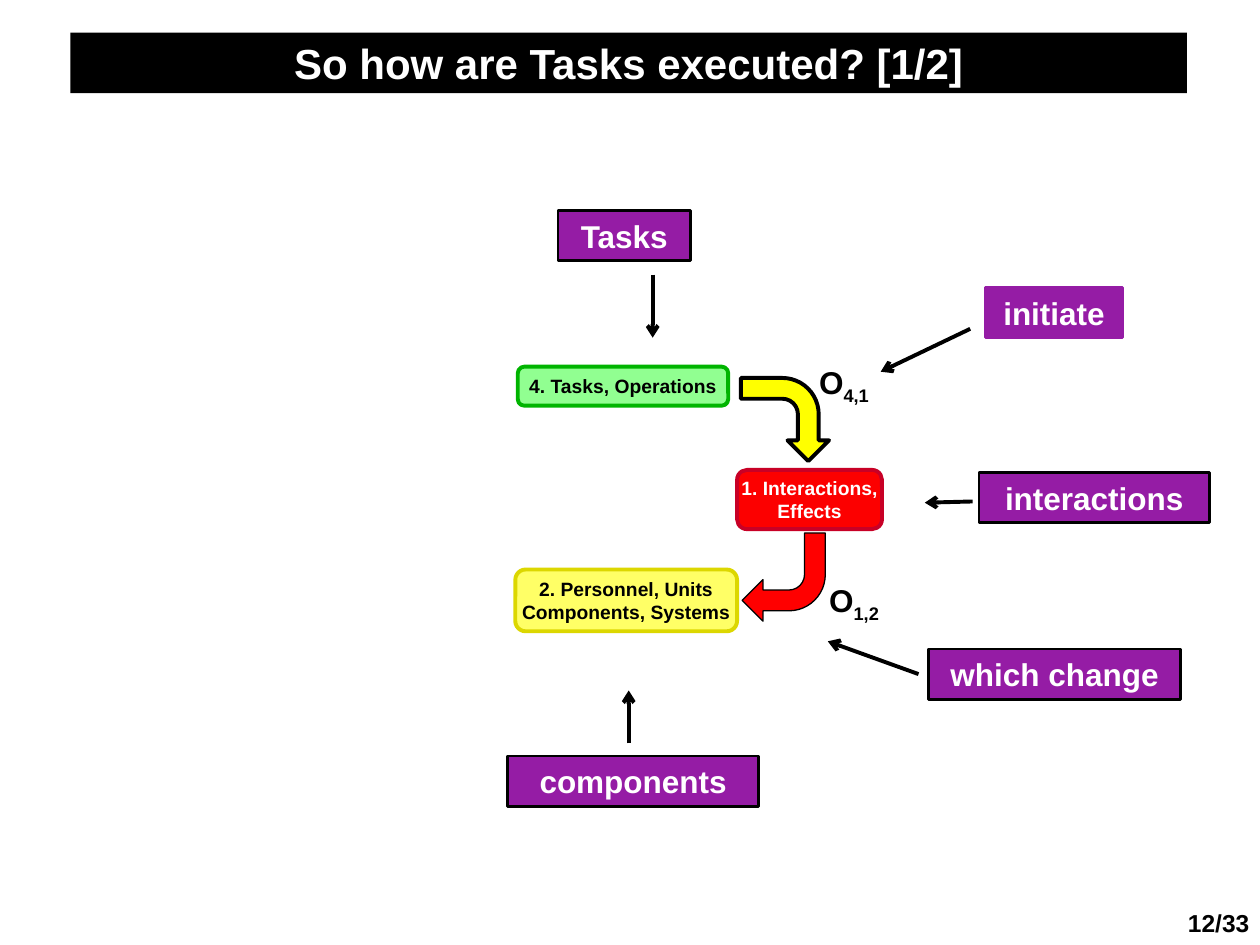
from dataclasses import dataclass

from lxml.etree import SubElement
from pptx import Presentation
from pptx.dml.color import RGBColor
from pptx.enum.shapes import MSO_CONNECTOR as Connector, MSO_SHAPE as Shape
from pptx.enum.text import MSO_ANCHOR as Anchor, PP_ALIGN as Align
from pptx.oxml.ns import qn
from pptx.util import Pt

PX = 9144  # EMU per px, 100 px to the inch


@dataclass(frozen=True)
class Theme:
    font: str = "Arial"
    black: str = "000000"
    white: str = "FFFFFF"
    purple: str = "951CA5"
    green: str = "91FF91"
    green_edge: str = "00B400"
    red: str = "FC0000"
    red_edge: str = "C80026"
    yellow: str = "FFFF66"
    yellow_edge: str = "DCD700"
    arrow_yellow: str = "FFFF00"
    arrow_red: str = "FF0000"
    title_size: int = 24
    label_size: int = 18
    page_size: int = 14
    node_size: int = 11
    thin: float = 0.75
    edge: float = 1.5
    thick: float = 2.25


class Deck:
    def __init__(self, theme, width, height):
        self.t = theme
        self.prs = Presentation()
        self.prs.slide_width, self.prs.slide_height = width * PX, height * PX
        self.s = self.prs.slides.add_slide(self.prs.slide_layouts[6])

    def set_text(self, sp, lines, size, color, align=Align.CENTER,
                 inset=(10, 5), wrap=True):
        tf = sp.text_frame
        tf.word_wrap = wrap
        tf.margin_left = tf.margin_right = inset[0] * PX
        tf.margin_top = tf.margin_bottom = inset[1] * PX
        tf.text = lines
        for p in tf.paragraphs:
            p.alignment = align
            p.font.name, p.font.size, p.font.bold = self.t.font, Pt(size), True
            p.font.color.rgb = RGBColor.from_string(color)
        return tf

    def shape(self, kind, box, fill, line=None, weight=0):
        sp = self.s.shapes.add_shape(kind, *(v * PX for v in box))
        sp.shadow.inherit = False
        sp.fill.solid()
        sp.fill.fore_color.rgb = RGBColor.from_string(fill)
        if line:
            sp.line.color.rgb = RGBColor.from_string(line)
            sp.line.width = Pt(weight)
        else:
            sp.line.fill.background()
        return sp

    def textbox(self, box):
        return self.s.shapes.add_textbox(*(v * PX for v in box))

    def title(self, text, box):
        sp = self.shape(Shape.RECTANGLE, box, self.t.black)
        tf = self.set_text(sp, text, self.t.title_size, self.t.white)
        tf.vertical_anchor = Anchor.MIDDLE
        tf.margin_top = 10 * PX
        tf.paragraphs[0].line_spacing = 0.85

    def page_number(self, text, box):
        self.set_text(self.textbox(box), text, self.t.page_size, self.t.black,
                      Align.LEFT, wrap=False)

    def label(self, text, left, top, width, line=None):
        sp = self.shape(Shape.RECTANGLE, (left, top, width, 40),
                        self.t.purple, line or self.t.black, self.t.edge)
        self.set_text(sp, text, self.t.label_size, self.t.white)

    def node(self, lines, box, fill, line, color, kind=Shape.ROUNDED_RECTANGLE):
        sp = self.shape(kind, box, fill, line, self.t.thick)
        tf = self.set_text(sp, lines, self.t.node_size, color,
                           inset=(0, 0), wrap=False)
        tf.vertical_anchor = Anchor.MIDDLE

    def bent_arrow(self, left, top, rotation, fill, weight):
        sp = self.shape(Shape.BENT_ARROW, (left, top, 66, 70), fill,
                        self.t.black, weight)
        sp.rotation = rotation

    def operator(self, index, left, top):
        tf = self.set_text(self.textbox((left, top, 75, 40)), "O",
                           self.t.label_size, self.t.black, Align.LEFT, (9, 5))
        r = tf.paragraphs[0].add_run()
        r.text = index
        r._r.get_or_add_rPr().set("baseline", "-25000")

    def pointer(self, x1, y1, x2, y2):
        c = self.s.shapes.add_connector(
            Connector.STRAIGHT, *(v * PX for v in (x1, y1, x2, y2)))
        c.line.color.rgb = RGBColor.from_string(self.t.black)
        c.line.width = Pt(self.t.thick)
        SubElement(c.line._get_or_add_ln(), qn("a:tailEnd"), type="arrow")
        SubElement(c._element.spPr, qn("a:effectLst"))


def main():
    t = Theme()
    deck = Deck(t, 1000, 750)

    # Title and page number
    deck.title("So how are Tasks executed? [1/2]", (56, 26, 886, 48))
    deck.page_number("12/33", (933, 716, 71, 34))

    # Process levels
    deck.node("4. Tasks, Operations", (411, 291, 167, 31), t.green,
              t.green_edge, t.black, Shape.FLOWCHART_ALTERNATE_PROCESS)
    deck.node("1. Interactions,\nEffects", (585, 373, 115, 47), t.red,
              t.red_edge, t.white)
    deck.node("2. Personnel, Units\nComponents, Systems", (409, 452, 176, 49),
              t.yellow, t.yellow_edge, t.black)

    # Operators between the levels
    deck.bent_arrow(590, 298, 90, t.arrow_yellow, t.thick)
    deck.operator("4,1", 641, 283)
    deck.bent_arrow(589, 423, 180, t.arrow_red, t.thin)
    deck.operator("1,2", 649, 456)

    # Purple labels
    deck.label("Tasks", 443, 167, 105)
    deck.label("initiate", 782, 228, 109, t.purple)
    deck.label("interactions", 777, 375, 183)
    deck.label("which change", 737, 515, 200)
    deck.label("components", 403, 600, 199)

    # Pointers from the labels to the diagram
    for ends in ((518, 218, 518, 268), (770, 261, 699, 295),
                 (772, 398, 734, 399), (729, 535, 657, 509),
                 (499, 590, 499, 548)):
        deck.pointer(*ends)

    deck.prs.save("out.pptx")


if __name__ == "__main__":
    main()
